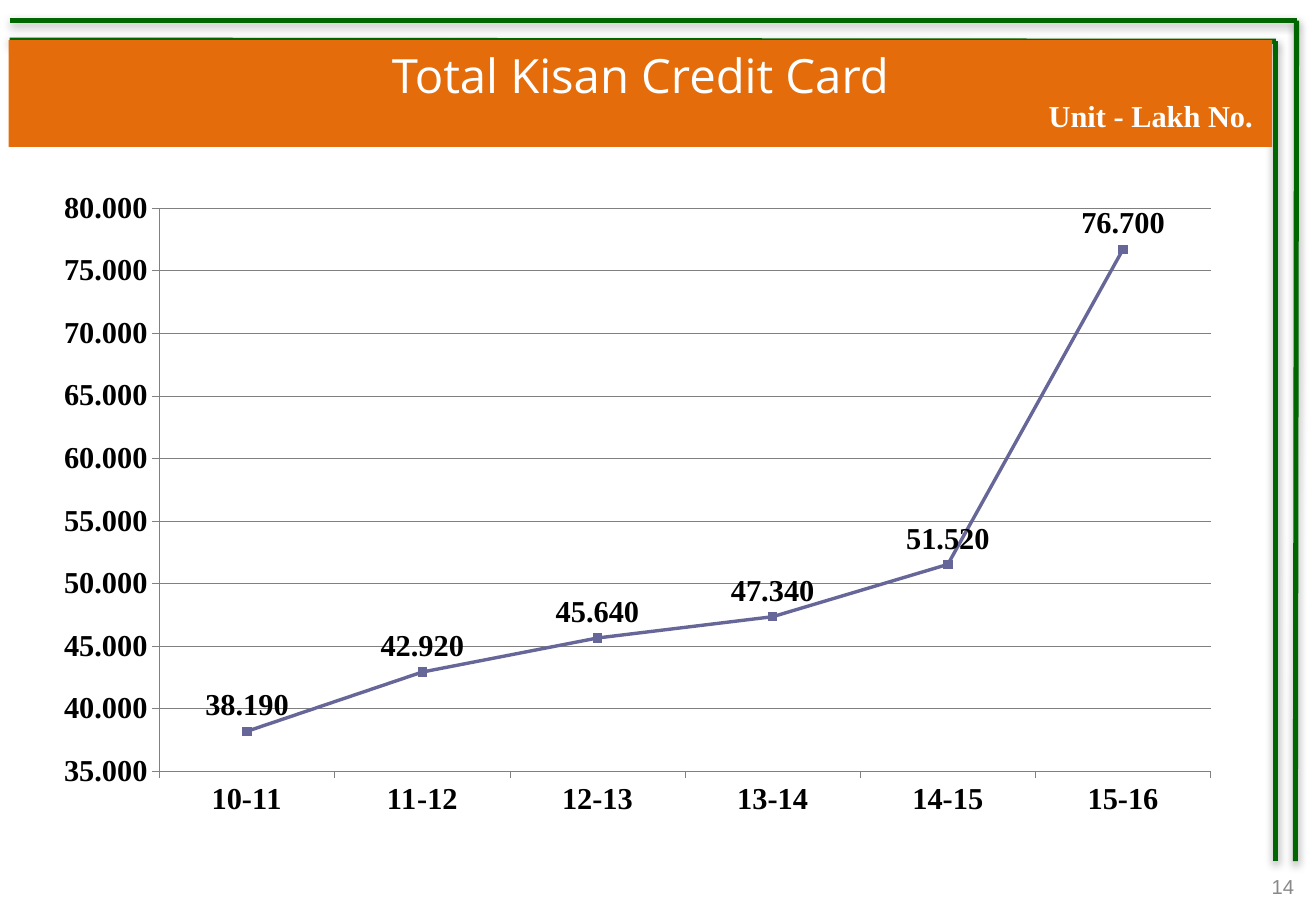
from dataclasses import dataclass

import pptx
import pptx.chart.data
import pptx.dml.color
import pptx.enum.chart
import pptx.enum.shapes
import pptx.enum.text
import pptx.oxml
import pptx.oxml.ns
import pptx.util
from pptx.util import Inches


@dataclass(frozen=True)
class Theme:
    banner: str = "E46C0A"
    frame: str = "006600"
    series: str = "666699"
    axis: str = "808080"
    white: str = "FFFFFF"
    black: str = "000000"
    muted: str = "898989"
    title_font: str = "Open Sans"
    body_font: str = "Times New Roman"
    number_font: str = "Arial"
    title_size: int = 28
    body_size: int = 18
    number_size: int = 12


THEME = Theme()
ALIGN = pptx.enum.text.PP_ALIGN
ANCHOR = pptx.enum.text.MSO_ANCHOR
YEARS = ["10-11", "11-12", "12-13", "13-14", "14-15", "15-16"]
CARDS = [38.19, 42.92, 45.64, 47.34, 51.52, 76.7]
FRAME_LINES = [
    (0.08, 0.17, 10.67, 0.17),
    (0.08, 0.33, 10.5, 0.34),
    (10.5, 0.34, 10.5, 7.09),
    (10.67, 0.17, 10.66, 7.09),
]
SHADOW = (
    '<a:effectLst %s><a:outerShdw blurRad="63500" dist="23000" dir="5400000" '
    'rotWithShape="0"><a:srgbClr val="%s"><a:alpha val="35000"/></a:srgbClr>'
    "</a:outerShdw></a:effectLst>"
)
PLOT_LAYOUT = (
    "<c:layout %s><c:manualLayout>"
    '<c:layoutTarget val="inner"/><c:xMode val="edge"/><c:yMode val="edge"/>'
    '<c:x val="0.1"/><c:y val="0.04"/><c:w val="0.88"/><c:h val="0.87"/>'
    "</c:manualLayout></c:layout>"
)


def rgb(value):
    return pptx.dml.color.RGBColor.from_string(value)


def style_font(font, name, size, color, bold=False):
    font.name = name
    font.size = pptx.util.Pt(size)
    font.color.rgb = rgb(color)
    font.bold = bold


def style_line(line, color, width):
    line.color.rgb = rgb(color)
    line.width = pptx.util.Pt(width)


def write_text(sp, text, align, anchor, wrap, **font):
    tf = sp.text_frame
    tf.auto_size = pptx.enum.text.MSO_AUTO_SIZE.NONE
    tf.word_wrap = wrap
    tf.vertical_anchor = anchor
    p = tf.paragraphs[0]
    p.alignment = align
    r = p.add_run()
    r.text = text
    style_font(r.font, **font)


def add_label(s, box, text, anchor, wrap, **font):
    sp = s.shapes.add_textbox(*map(Inches, box))
    write_text(sp, text, ALIGN.RIGHT, anchor, wrap, **font)


def add_frame_line(s, ends):
    line = s.shapes.add_connector(
        pptx.enum.shapes.MSO_CONNECTOR.STRAIGHT, *map(Inches, ends)
    )
    style_line(line.line, THEME.frame, 3)
    shadow = SHADOW % (pptx.oxml.ns.nsdecls("a"), THEME.black)
    line.element.spPr.append(pptx.oxml.parse_xml(shadow))


def place_title(s, box, text):
    sp = s.shapes.title
    sp.left, sp.top, sp.width, sp.height = map(Inches, box)
    sp.fill.solid()
    sp.fill.fore_color.rgb = rgb(THEME.banner)
    write_text(sp, text, ALIGN.CENTER, ANCHOR.TOP, True,
               name=THEME.title_font, size=THEME.title_size, color=THEME.white)
    s.shapes.element.append(sp.element)


def style_axis(axis):
    axis.major_tick_mark = pptx.enum.chart.XL_TICK_MARK.OUTSIDE
    axis.minor_tick_mark = pptx.enum.chart.XL_TICK_MARK.NONE
    style_line(axis.format.line, THEME.axis, 0.25)
    style_font(axis.tick_labels.font, THEME.body_font, THEME.body_size,
               THEME.black, True)


def style_series(series):
    series.smooth = False
    style_line(series.format.line, THEME.series, 2)
    marker = series.marker
    marker.style = pptx.enum.chart.XL_MARKER_STYLE.SQUARE
    marker.size = 5
    marker.format.fill.solid()
    marker.format.fill.fore_color.rgb = rgb(THEME.series)
    marker.format.line.color.rgb = rgb(THEME.series)
    labels = series.data_labels
    labels.show_value = True
    labels.position = pptx.enum.chart.XL_LABEL_POSITION.ABOVE
    labels.number_format = "0.000"
    labels.number_format_is_linked = False
    style_font(labels.font, THEME.body_font, THEME.body_size, THEME.black, True)


def set_plot_layout(chart):
    area = chart.element.find(".//" + pptx.oxml.ns.qn("c:plotArea"))
    for layout in area.findall(pptx.oxml.ns.qn("c:layout")):
        area.remove(layout)
    area.insert(0, pptx.oxml.parse_xml(PLOT_LAYOUT % pptx.oxml.ns.nsdecls("c")))


def add_card_chart(s, box):
    data = pptx.chart.data.CategoryChartData(number_format="0.000")
    data.categories = YEARS
    data.add_series("Series 1", CARDS)
    chart = s.shapes.add_chart(
        pptx.enum.chart.XL_CHART_TYPE.LINE_MARKERS, *map(Inches, box), data
    ).chart
    chart.has_title = False
    chart.has_legend = False
    style_font(chart.font, THEME.body_font, THEME.body_size, THEME.black)
    chart.plots[0].vary_by_categories = False
    style_axis(chart.category_axis)
    axis = chart.value_axis
    style_axis(axis)
    axis.minimum_scale, axis.maximum_scale, axis.major_unit = 35, 80, 5
    axis.tick_labels.number_format = "0.000"
    axis.tick_labels.number_format_is_linked = False
    axis.has_major_gridlines = True
    style_line(axis.major_gridlines.format.line, THEME.axis, 0.25)
    style_series(chart.plots[0].series[0])
    set_plot_layout(chart)


def main():
    prs = pptx.Presentation()
    prs.slide_width, prs.slide_height = Inches(10.83), Inches(7.5)
    s = prs.slides.add_slide(prs.slide_layouts.get_by_name("Title Only"))
    add_label(s, (8.22, 7.1, 2.53, 0.4), "14", ANCHOR.MIDDLE, True,
              name=THEME.number_font, size=THEME.number_size, color=THEME.muted)
    add_card_chart(s, (0.33, 1.5, 9.83, 5.33))
    for ends in FRAME_LINES:
        add_frame_line(s, ends)
    place_title(s, (0.07, 0.33, 10.4, 0.88), "Total Kisan Credit Card")
    add_label(s, (8.45, 0.75, 1.96, 0.4), "Unit - Lakh No.", ANCHOR.TOP, False,
              name=THEME.body_font, size=THEME.body_size, color=THEME.white,
              bold=True)
    prs.save("out.pptx")


if __name__ == "__main__":
    main()
